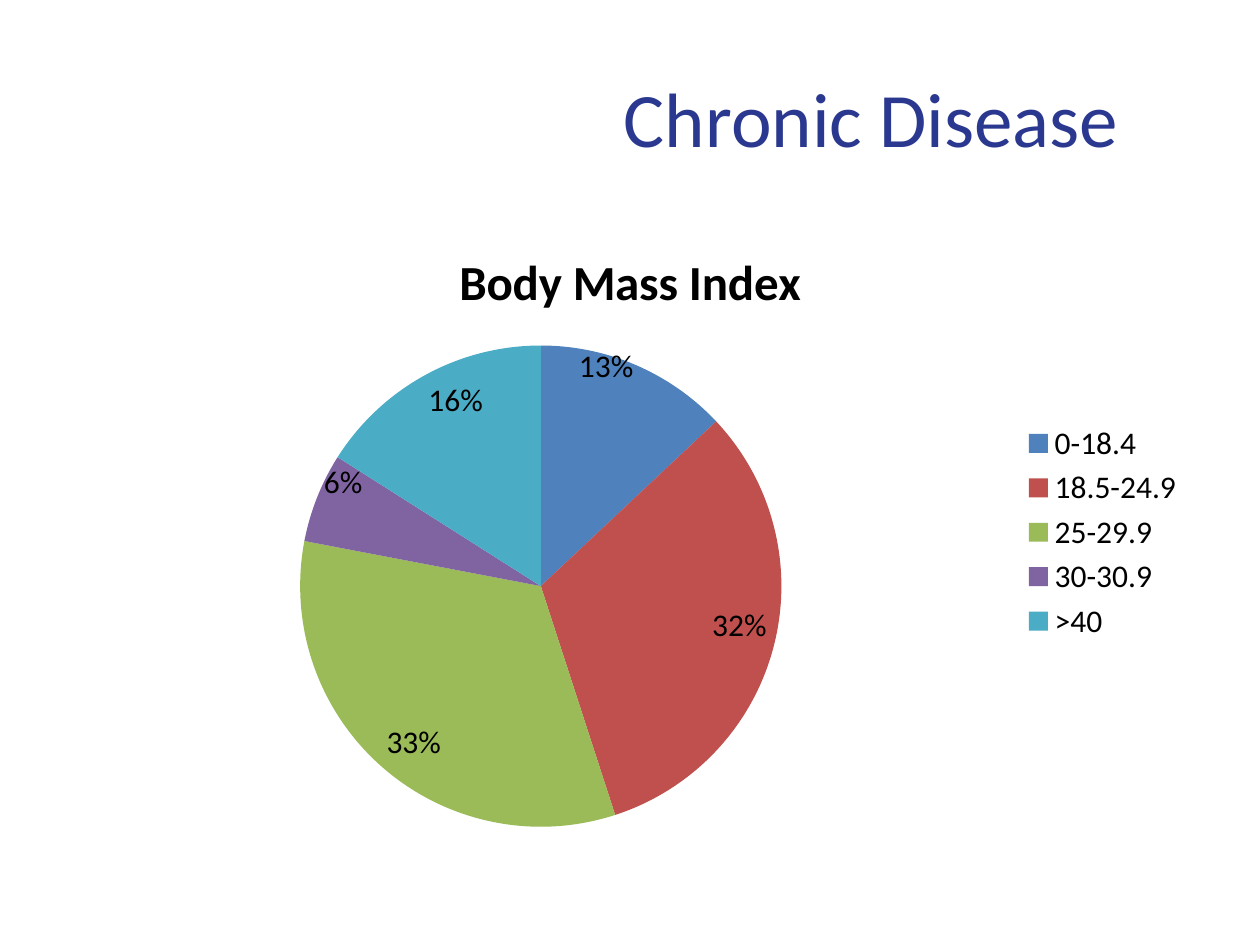
from lxml.etree import SubElement
from pptx import Presentation
from pptx.chart.data import CategoryChartData
from pptx.dml.color import RGBColor
from pptx.enum.chart import XL_CHART_TYPE, XL_LABEL_POSITION, XL_LEGEND_POSITION
from pptx.enum.text import MSO_ANCHOR, PP_ALIGN
from pptx.oxml.ns import qn
from pptx.util import Pt

FONT = "Calibri"
COLORS = {"title": "2A388F", "text": "000000"}
SLICES = {
    "0-18.4": (13, "4F81BD"),
    "18.5-24.9": (32, "C0504D"),
    "25-29.9": (33, "9BBB59"),
    "30-30.9": (6, "8064A2"),
    ">40": (16, "4BACC6"),
}
# Vertical shift of single labels, as a share of the chart height
LABEL_SHIFTS = {0: -0.04, 3: -0.06}


def set_font(font, size, color, bold=False):
    font.name = FONT
    font.size = Pt(size)
    font.bold = bold
    font.color.rgb = RGBColor.from_string(COLORS[color])


deck = Presentation()
deck.slide_width, deck.slide_height = Pt(720), Pt(540)
page = deck.slides.add_slide(deck.slide_layouts[5])

# Title
title = page.shapes.title
title.left, title.top, title.width, title.height = Pt(312), Pt(21.6), Pt(372), Pt(90)
title.text_frame.vertical_anchor = MSO_ANCHOR.MIDDLE
para = title.text_frame.paragraphs[0]
para.alignment = PP_ALIGN.CENTER
span = para.add_run()
span.text = "Chronic Disease"
set_font(span.font, 44, "title")

# Pie chart
data = CategoryChartData()
data.categories = list(SLICES)
data.add_series("Series 1", [value for value, color in SLICES.values()])
chart = page.shapes.add_chart(
    XL_CHART_TYPE.PIE, Pt(36), Pt(126), Pt(648), Pt(356.4), data
).chart
set_font(chart.font, 10, "text")

chart.has_title = True
span = chart.chart_title.text_frame.paragraphs[0].add_run()
span.text = "Body Mass Index"
set_font(span.font, 28, "text", bold=True)

chart.has_legend = True
chart.legend.position = XL_LEGEND_POSITION.RIGHT
chart.legend.include_in_layout = False
set_font(chart.legend.font, 18, "text")

chart.plots[0].vary_by_categories = True
series = chart.plots[0].series[0]
for index, (value, color) in enumerate(SLICES.values()):
    fill = series.points[index].format.fill
    fill.solid()
    fill.fore_color.rgb = RGBColor.from_string(color)

# Percent labels
labels = series.data_labels
labels.show_percentage = True
labels.show_value = False
labels.position = XL_LABEL_POSITION.INSIDE_END
set_font(labels.font, 18, "text")

for index in LABEL_SHIFTS:
    label = series.points[index].data_label
    label.position = XL_LABEL_POSITION.INSIDE_END
    set_font(label.font, 18, "text")

for element in series._element.iter(qn("c:dLbl")):
    element.find(qn("c:showVal")).set("val", "0")
    element.find(qn("c:showPercent")).set("val", "1")
    index_element = element.find(qn("c:idx"))
    layout = SubElement(element, qn("c:layout"))
    index_element.addnext(layout)
    manual = SubElement(layout, qn("c:manualLayout"))
    SubElement(manual, qn("c:x")).set("val", "0")
    shift = LABEL_SHIFTS[int(index_element.get("val"))]
    SubElement(manual, qn("c:y")).set("val", str(shift))

deck.save("out.pptx")
